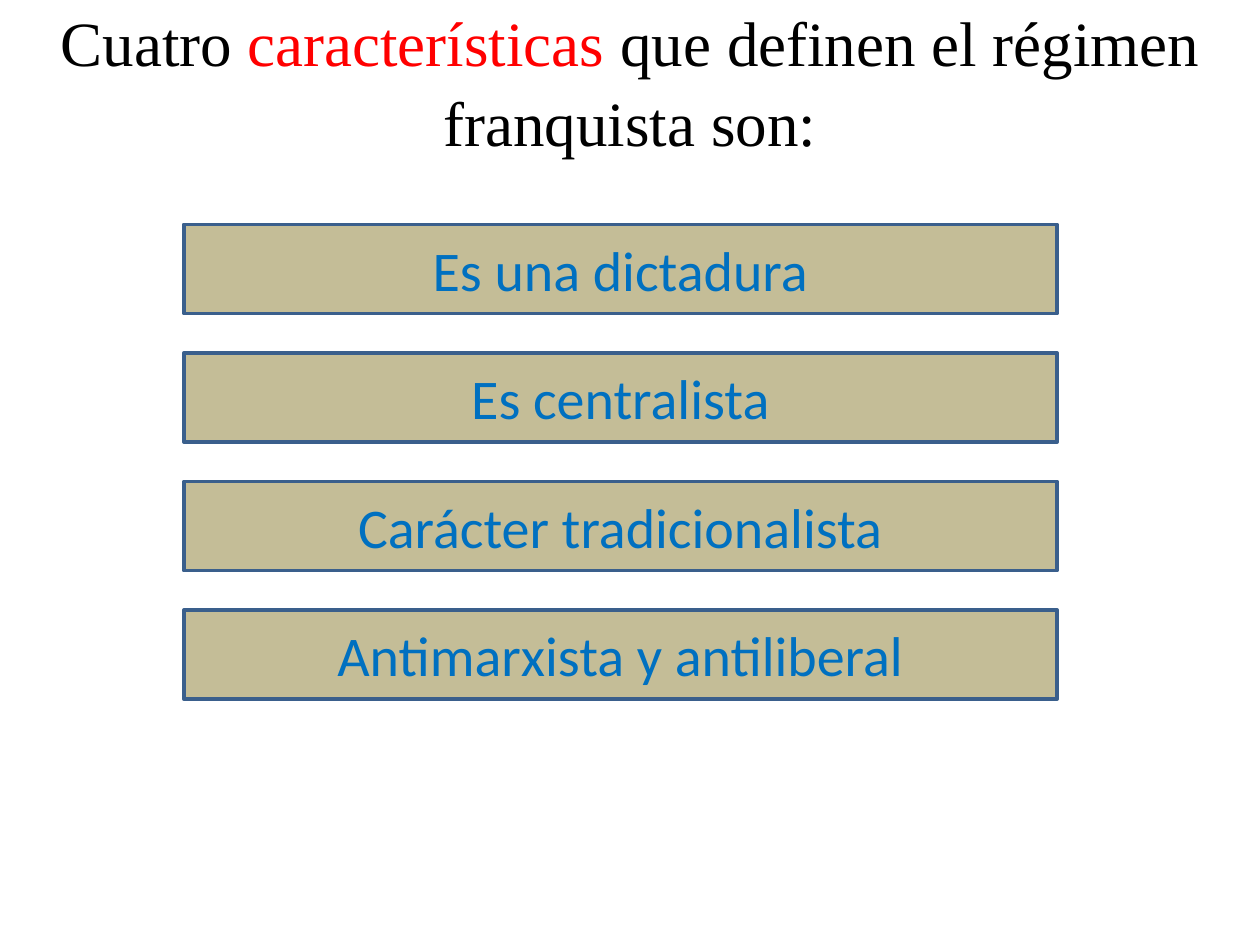
"""Build a slide listing four features of the Franco regime."""
from dataclasses import dataclass

from pptx import Presentation
from pptx.dml.color import RGBColor
from pptx.enum.shapes import MSO_SHAPE
from pptx.enum.text import MSO_ANCHOR, MSO_AUTO_SIZE, PP_ALIGN
from pptx.util import Inches, Pt

RECTANGLE = MSO_SHAPE.RECTANGLE
CENTER = PP_ALIGN.CENTER
MIDDLE, BOTTOM = MSO_ANCHOR.MIDDLE, MSO_ANCHOR.BOTTOM
NO_AUTOFIT = MSO_AUTO_SIZE.NONE
TITLE_ONLY = 5


@dataclass(frozen=True)
class Theme:
    title_font: str = "Times New Roman"
    body_font: str = "Calibri"
    title_size: int = 36
    body_size: int = 32
    line_width: int = 2
    title: str = "000000"
    accent: str = "FF0000"
    fill: str = "C4BD97"
    line: str = "3A5F8C"
    body: str = "0070C0"


class SlideBuilder:
    def __init__(self, slide, theme):
        self.s = slide
        self.theme = theme

    def add_run(self, p, text, font, size, color):
        r = p.add_run()
        r.text = text
        r.font.name = font
        r.font.size = Pt(size)
        r.font.color.rgb = RGBColor.from_string(color)

    def add_title(self, left, top, width, height, runs):
        sp = self.s.shapes.title
        sp.left, sp.top = Inches(left), Inches(top)
        sp.width, sp.height = Inches(width), Inches(height)
        tf = sp.text_frame
        tf.word_wrap = True
        tf.auto_size = NO_AUTOFIT
        tf.vertical_anchor = BOTTOM
        p = tf.paragraphs[0]
        p.alignment = CENTER
        p.line_spacing = 1.05
        for text, color in runs:
            self.add_run(p, text, self.theme.title_font, self.theme.title_size, color)

    def add_box(self, left, top, width, height, text):
        sp = self.s.shapes.add_shape(
            RECTANGLE, Inches(left), Inches(top), Inches(width), Inches(height))
        sp.shadow.inherit = False
        sp.fill.solid()
        sp.fill.fore_color.rgb = RGBColor.from_string(self.theme.fill)
        sp.line.color.rgb = RGBColor.from_string(self.theme.line)
        sp.line.width = Pt(self.theme.line_width)
        tf = sp.text_frame
        tf.word_wrap = True
        tf.vertical_anchor = MIDDLE
        p = tf.paragraphs[0]
        p.alignment = CENTER
        self.add_run(p, text, self.theme.body_font, self.theme.body_size, self.theme.body)


def main():
    prs = Presentation()
    prs.slide_width, prs.slide_height = Inches(10), Inches(7.5)
    theme = Theme()
    slide = SlideBuilder(prs.slides.add_slide(prs.slide_layouts[TITLE_ONLY]), theme)
    slide.add_title(0, 0, 10, 1.31, [
        ("Cuatro ", theme.title),
        ("características", theme.accent),
        (" que definen el régimen franquista son:", theme.title),
    ])
    features = [
        "Es una dictadura",
        "Es centralista",
        "Carácter tradicionalista",
        "Antimarxista y antiliberal",
    ]
    first_top, pitch = 1.78, 1.02
    for i, feature in enumerate(features):
        slide.add_box(1.46, first_top + i * pitch, 6.93, 0.71, feature)
    prs.save("out.pptx")


if __name__ == "__main__":
    main()
